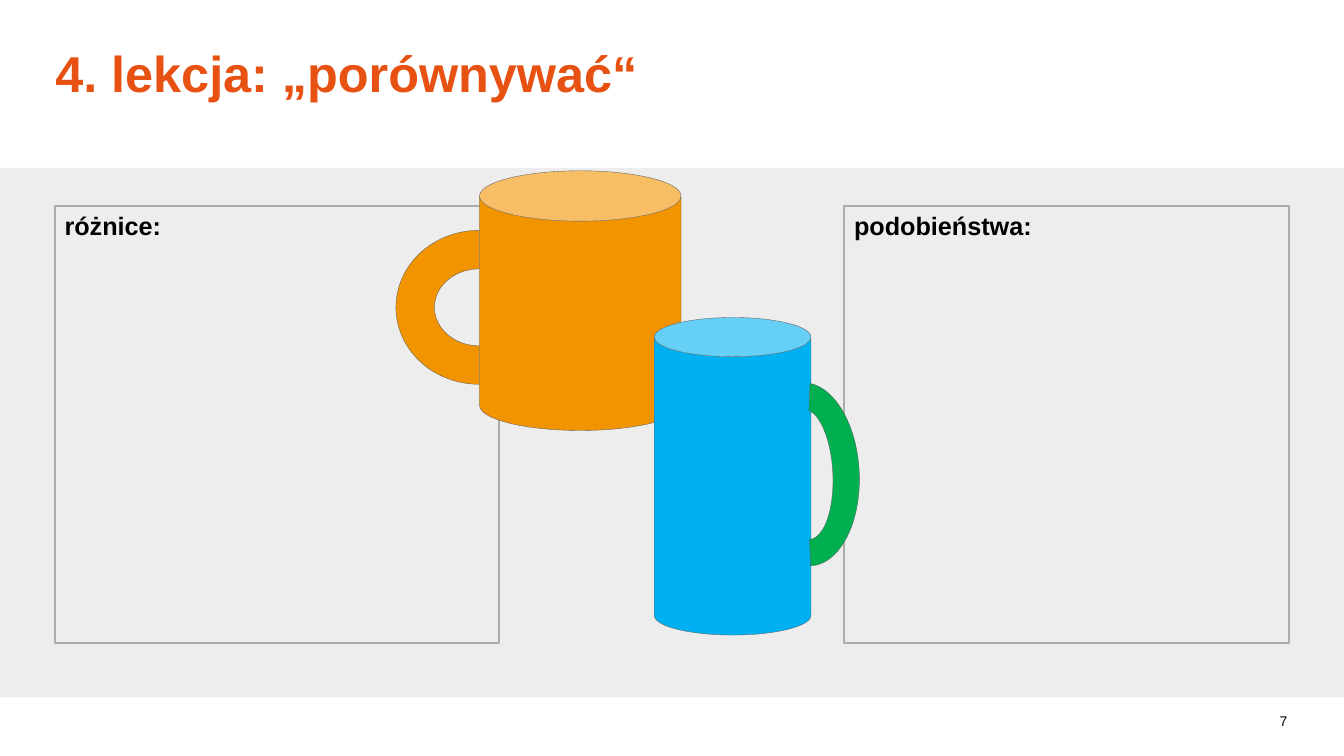
"""Build a lesson slide comparing two mugs, with boxes for differences and similarities."""
import pptx
import pptx.dml.color
import pptx.enum.shapes
import pptx.enum.text
import pptx.util

Pt = pptx.util.Pt
RGBColor = pptx.dml.color.RGBColor
MSO_SHAPE = pptx.enum.shapes.MSO_SHAPE
PP_ALIGN = pptx.enum.text.PP_ALIGN
MSO_ANCHOR = pptx.enum.text.MSO_ANCHOR

PANEL_GREY = RGBColor(0xED, 0xED, 0xED)
BOX_GREY = RGBColor(0xAC, 0xAC, 0xAC)
OUTLINE_GREY = RGBColor(0x5F, 0x5F, 0x5F)
TITLE_ORANGE = RGBColor(0xE7, 0x51, 0x12)
MUG_ORANGE = RGBColor(0xF2, 0x94, 0x00)
MUG_BLUE = RGBColor(0x00, 0xB0, 0xF0)
HANDLE_GREEN = RGBColor(0x00, 0xB0, 0x50)
BLACK = RGBColor(0, 0, 0)

presentation = pptx.Presentation()
presentation.slide_width = Pt(960)
presentation.slide_height = Pt(540)
slide = presentation.slides.add_slide(presentation.slide_layouts[6])


def add_part(preset, bounds, fill=None, line=None, width=0.25):
    part = slide.shapes.add_shape(preset, *map(Pt, bounds))
    part.shadow.inherit = False
    if fill is None:
        part.fill.background()
    else:
        part.fill.solid()
        part.fill.fore_color.rgb = fill
    if line is None:
        part.line.fill.background()
    else:
        part.line.color.rgb = line
        part.line.width = Pt(width)
    return part


def write(holder, text, size, color, bold, align=PP_ALIGN.LEFT, anchor=MSO_ANCHOR.TOP, inset=None):
    frame = holder.text_frame
    frame.text = text
    frame.word_wrap = True
    frame.vertical_anchor = anchor
    if inset is not None:
        frame.margin_left = frame.margin_right = Pt(inset)
        frame.margin_top = frame.margin_bottom = Pt(inset)
    paragraph = frame.paragraphs[0]
    paragraph.alignment = align
    font = paragraph.runs[0].font
    font.name = "Arial"
    font.size = Pt(size)
    font.bold = bold
    font.color.rgb = color


add_part(MSO_SHAPE.RECTANGLE, (0, 120, 960, 378), PANEL_GREY)

title = slide.shapes.add_textbox(Pt(39.5), Pt(30), Pt(564), Pt(77))
write(title, "4. lekcja: „porównywać“", 36, TITLE_ORANGE, True, inset=0)

page_number = slide.shapes.add_textbox(Pt(854.5), Pt(500.5), Pt(65), Pt(29))
write(page_number, "7", 10, BLACK, False, PP_ALIGN.RIGHT, MSO_ANCHOR.MIDDLE, 0)

for heading, left in (("różnice:", 39), ("podobieństwa:", 603)):
    comparison_box = add_part(MSO_SHAPE.RECTANGLE, (left, 147, 317.5, 312.5), line=BOX_GREY, width=1.5)
    write(comparison_box, heading, 18, BLACK, True)

orange_handle = add_part(MSO_SHAPE.BLOCK_ARC, (287.3, 160, 110, 119), MUG_ORANGE, OUTLINE_GREY)
orange_handle.rotation = 270

add_part(MSO_SHAPE.CAN, (342.5, 122, 144, 185.5), MUG_ORANGE, OUTLINE_GREY)
add_part(MSO_SHAPE.CAN, (467.3, 226.8, 112, 226.8), MUG_BLUE, OUTLINE_GREY)

green_handle = add_part(MSO_SHAPE.BLOCK_ARC, (510.5, 301, 131, 75.6), HANDLE_GREEN, OUTLINE_GREY)
green_handle.rotation = 87.3
green_handle.adjustments[0] = 110.97

presentation.save("out.pptx")
